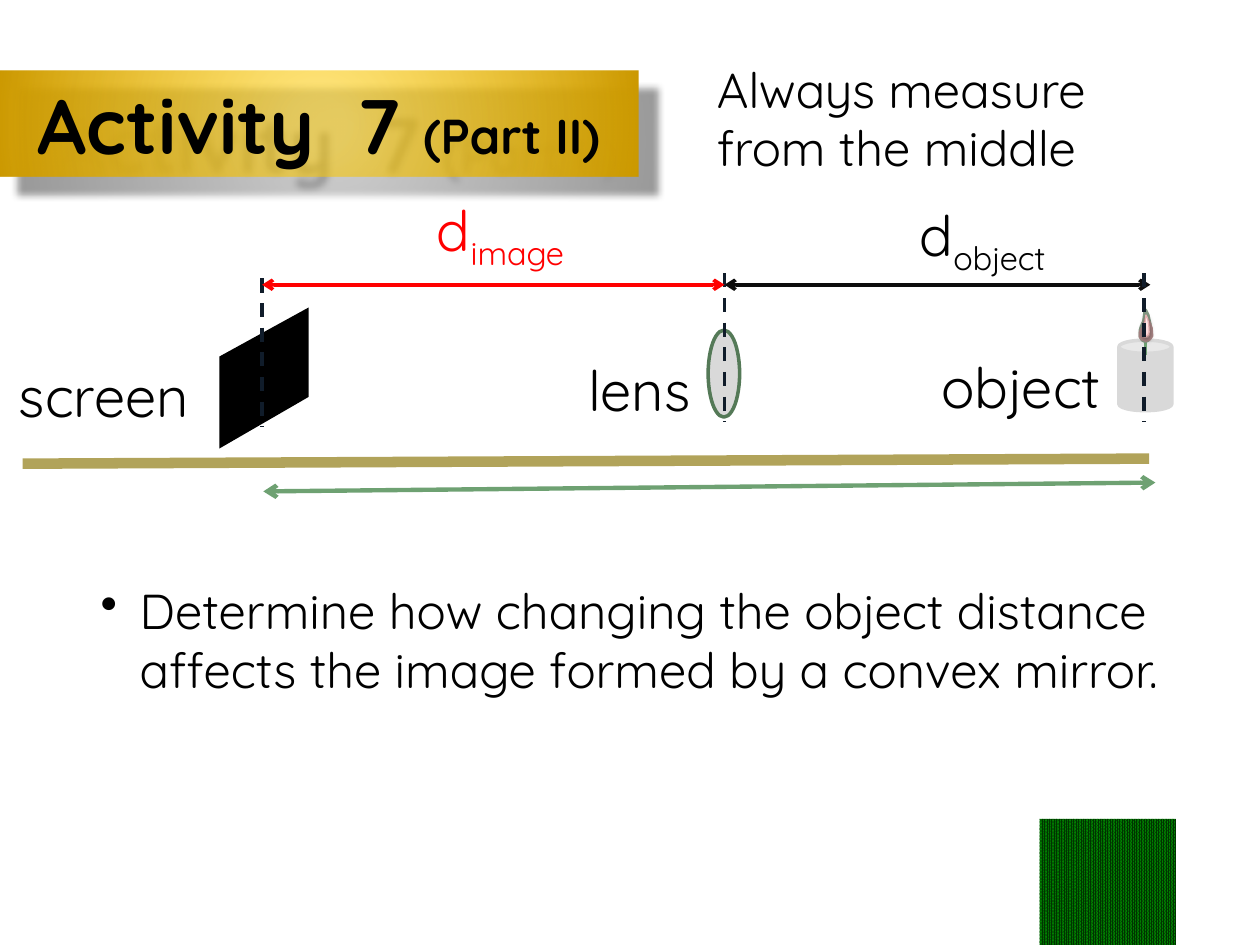
from lxml import etree
from pptx import Presentation
from pptx.dml.color import RGBColor
from pptx.enum.dml import MSO_LINE, MSO_PATTERN
from pptx.enum.shapes import MSO_CONNECTOR, MSO_SHAPE
from pptx.enum.text import MSO_ANCHOR, PP_ALIGN
from pptx.oxml import parse_xml
from pptx.oxml.ns import qn
from pptx.util import Inches, Pt

FONT = "Quicksand"
NS = 'xmlns:a="http://schemas.openxmlformats.org/drawingml/2006/main"'
RECT, OVAL, CAN = MSO_SHAPE.RECTANGLE, MSO_SHAPE.OVAL, MSO_SHAPE.CAN
STRAIGHT, DASH = MSO_CONNECTOR.STRAIGHT, MSO_LINE.DASH
DENSE = MSO_PATTERN.PERCENT_90
LEFT, CENTER, MIDDLE, TOP = (PP_ALIGN.LEFT, PP_ALIGN.CENTER,
                             MSO_ANCHOR.MIDDLE, MSO_ANCHOR.TOP)

BLACK, RED, GRAY, GREEN = "000000", "FF0000", "D9D9D9", "6EA172"
SCREEN_X, LENS_X, OBJECT_X = 2.08, 5.75, 9.08
RAY_Y = 2.26
SCREEN = [(1.74, 2.83), (2.45, 2.44), (2.45, 3.15), (1.74, 3.56)]
# Flame outline as fractions of its width and height
FLAME = [(0.5, 1), (0.2, 0.95), (0, 0.84), (0, 0.65), (0.12, 0.52),
         (0.35, 0.36), (0.5, 0), (0.75, 0.16), (0.95, 0.44), (1, 0.8),
         (0.8, 0.95)]


def color(code):
    return RGBColor.from_string(code)


def style(shape, fill=None, line=None, width=2):
    shape.shadow.inherit = False
    if fill:
        shape.fill.solid()
        shape.fill.fore_color.rgb = color(fill)
    else:
        shape.fill.background()
    if line:
        shape.line.color.rgb = color(line)
        shape.line.width = Pt(width)
    else:
        shape.line.fill.background()
    return shape


def add_box(shapes, kind, box, **look):
    return style(shapes.add_shape(kind, *map(Inches, box)), **look)


def add_form(shapes, points, **look):
    spots = [(Inches(x), Inches(y)) for x, y in points]
    form = shapes.build_freeform(*spots[0])
    form.add_line_segments(spots[1:], close=True)
    return style(form.convert_to_shape(), **look)


def add_flame(shapes, box, **look):
    left, top, width, height = box
    points = [(left + x * width, top + y * height) for x, y in FLAME]
    return add_form(shapes, points, **look)


def add_line(shapes, start, end, tint, width=2, dash=False, arrows=False):
    line = shapes.add_connector(STRAIGHT, *map(Inches, (*start, *end)))
    line.line.color.rgb = color(tint)
    line.line.width = Pt(width)
    if dash:
        line.line.dash_style = DASH
    if arrows:
        for tag in ("a:headEnd", "a:tailEnd"):
            etree.SubElement(line.line._ln, qn(tag), type="arrow")
    etree.SubElement(line._element.spPr, qn("a:effectLst"))


def set_blend(shape, stops, way):
    """Swap an empty fill for a gradient; stops are (percent, hex, alpha)."""
    marks = "".join(
        f'<a:gs pos="{pos * 1000}"><a:srgbClr val="{tint}">'
        f'<a:alpha val="{alpha * 1000}"/></a:srgbClr></a:gs>'
        for pos, tint, alpha in stops)
    blend = parse_xml(f'<a:gradFill {NS} rotWithShape="1">'
                      f'<a:gsLst>{marks}</a:gsLst>{way}</a:gradFill>')
    props = shape._element.spPr
    props.replace(props.find(qn("a:noFill")), blend)


def set_shadow(shape, alpha, blur, dist, angle):
    effects = shape._element.spPr.find(qn("a:effectLst"))
    effects.append(parse_xml(
        f'<a:outerShdw {NS} blurRad="{Pt(blur)}" dist="{Pt(dist)}" '
        f'dir="{angle * 60000}" algn="ctr" rotWithShape="0">'
        f'<a:srgbClr val="{BLACK}"><a:alpha val="{alpha * 1000}"/>'
        f'</a:srgbClr></a:outerShdw>'))


def write(shape, text, size=32, tint=BLACK, bold=False, align=LEFT,
          anchor=TOP, sub="", small=None, bullet=False):
    """Write text, then an optional tail: smaller if small, else subscript."""
    frame = shape.text_frame
    frame.word_wrap = True
    frame.vertical_anchor = anchor
    para = frame.paragraphs[0]
    para.alignment = align
    if bullet:
        props = para._p.get_or_add_pPr()
        props.set("marL", str(Inches(0.31)))
        props.set("indent", str(Inches(-0.31)))
        etree.SubElement(props, qn("a:buChar"), char="•")
    for part, points in ((text, size), (sub, small or size)):
        if not part:
            continue
        run = para.add_run()
        run.text = part
        run.font.name = FONT
        run.font.size = Pt(points)
        run.font.bold = bold
        run.font.color.rgb = color(tint)
    if sub and not small:
        run.font._element.set("baseline", "-25000")


def add_text(shapes, box, text, **form):
    write(shapes.add_textbox(*map(Inches, box)), text, **form)


def add_title(shapes):
    title = add_box(shapes, RECT, (-0.01, 0.56, 5.08, 0.84))
    set_blend(title, [(8, "FFCC00", 52), (100, "CC9900", 100)],
              '<a:path path="circle"><a:fillToRect l="50000" t="50000" '
              'r="50000" b="50000"/></a:path>')
    set_shadow(title, 40, 4, 15, 45)
    write(title, "Activity  7 ", size=44, bold=True, align=CENTER,
          anchor=MIDDLE, sub="(Part II)", small=28)


def add_candle(shapes):
    parts = shapes.add_group_shape().shapes
    add_box(parts, CAN, (8.88, 2.7, 0.42, 0.56), fill=GRAY, line=GRAY)
    add_line(parts, (9.09, 2.82), (9.09, 2.67), GREEN)
    add_flame(parts, (9.05, 2.46, 0.08, 0.25), fill="B0CCB0", line="829782")
    add_flame(parts, (9.05, 2.53, 0.09, 0.17), fill="E8B7B7", line="AC8787")
    core = add_flame(parts, (9.07, 2.5, 0.05, 0.17), line="E4B2B2", width=0.75)
    set_blend(core, [(0, "FFD4D4", 100), (35, "FFE0E0", 100),
                     (100, "FFF3F3", 100)], '<a:lin ang="16200000"/>')
    set_shadow(core, 38, 3.1, 1.6, 90)


def add_patch(shapes):
    patch = add_box(shapes, RECT, (8.25, 6.5, 1.08, 1))
    patch.fill.patterned()
    patch.fill.pattern = DENSE
    patch.fill.fore_color.rgb = color("003300")
    patch.fill.back_color.rgb = color("008000")


def main():
    deck = Presentation()
    deck.slide_width, deck.slide_height = Inches(10), Inches(7.5)
    shapes = deck.slides.add_slide(deck.slide_layouts[6]).shapes

    add_title(shapes)
    add_patch(shapes)
    add_line(shapes, (0.18, 3.68), (9.12, 3.64), "B1A35A", width=6)
    for text, box in (("object", (7.25, 2.75, 1.71, 0.64)),
                      ("screen", (0, 2.82, 1.65, 0.64)),
                      ("lens", (4.54, 2.77, 1.07, 0.64))):
        add_text(shapes, box, text, align=CENTER)
    add_form(shapes, SCREEN, fill=BLACK)
    add_candle(shapes)
    add_line(shapes, (2.09, 3.9), (9.17, 3.83), GREEN, width=2.5, arrows=True)
    add_box(shapes, OVAL, (5.62, 2.62, 0.25, 0.69), fill=GRAY, line="547957")

    add_text(shapes, (5.59, 0.42, 3.41, 1.04),
             "Always measure from the middle", size=28)
    add_text(shapes, (7.2, 1.54, 1.68, 0.64), "d", sub="object")
    add_line(shapes, (LENS_X, RAY_Y), (9.13, RAY_Y), "0D0D0D", arrows=True)
    for x, top in ((LENS_X, 2.17), (OBJECT_X, 2.17), (SCREEN_X, 2.21)):
        add_line(shapes, (x, top), (x, top + 1.18), "101C2A", dash=True)
    add_line(shapes, (SCREEN_X, RAY_Y), (LENS_X, RAY_Y), RED, arrows=True)
    add_text(shapes, (3.37, 1.5, 1.46, 0.64), "d", tint=RED, sub="image")
    add_text(shapes, (0.7, 4.56, 9.09, 1.51),
             "Determine how changing the object distance affects the image "
             "formed by a convex mirror.", size=28, bullet=True)
    deck.save("out.pptx")


if __name__ == "__main__":
    main()
